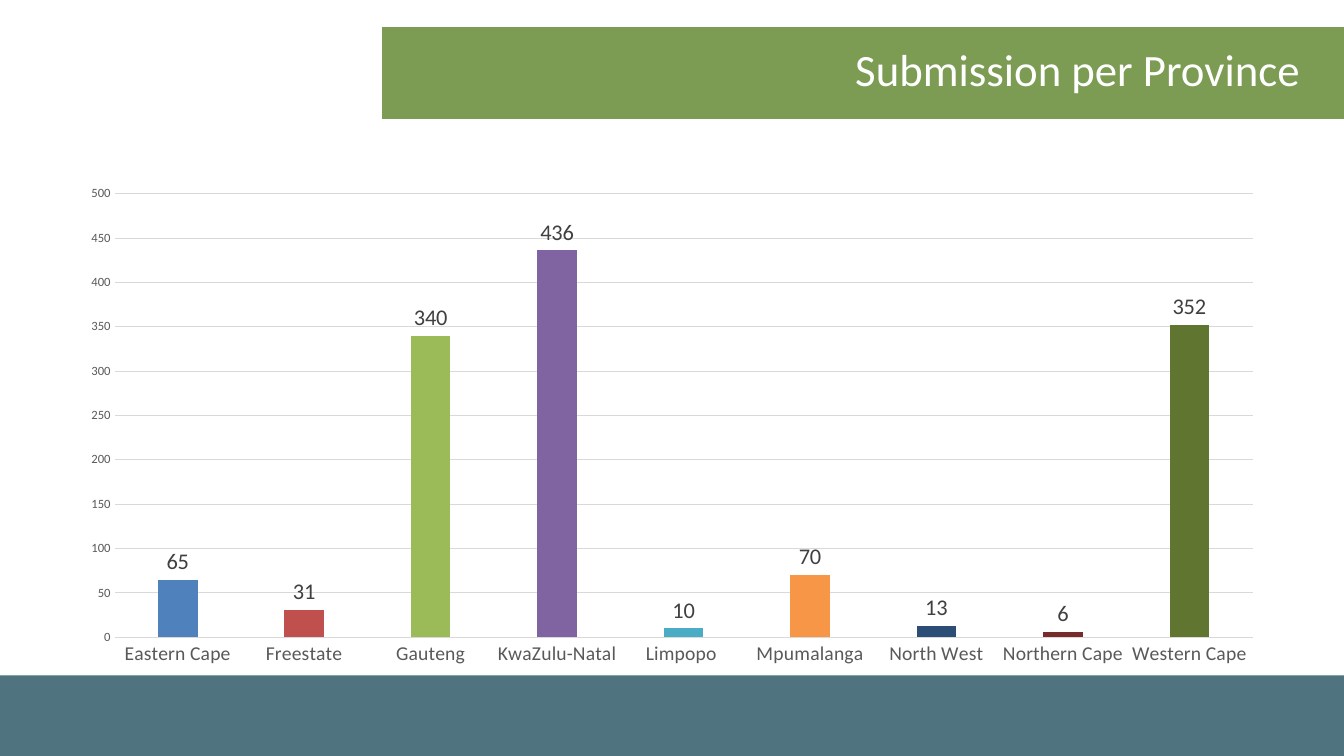
import pptx
import pptx.chart.data
import pptx.dml.color
import pptx.enum.chart
import pptx.enum.shapes
import pptx.enum.text
import pptx.oxml
import pptx.oxml.ns
import pptx.util

COLUMNS, ROWS = 160, 90
CELL = pptx.util.Inches(1) / 12
FONT = "Calibri"

SUBMISSIONS = [
    ("Eastern Cape", 65, "4F81BD"),
    ("Freestate", 31, "C0504D"),
    ("Gauteng", 340, "9BBB59"),
    ("KwaZulu-Natal", 436, "8064A2"),
    ("Limpopo ", 10, "4BACC6"),
    ("Mpumalanga", 70, "F79646"),
    ("North West", 13, "2C4D75"),
    ("Northern Cape", 6, "772C2A"),
    ("Western Cape", 352, "5F7530"),
]


def color(value):
    return pptx.dml.color.RGBColor.from_string(value)


def grid(*cells):
    return [round(cell * CELL) for cell in cells]


def style_font(font, size, fill):
    font.name = FONT
    font.size = pptx.util.Pt(size)
    font.bold = False
    font.color.rgb = color(fill)


def paint(part, fill):
    part.fill.solid()
    part.fill.fore_color.rgb = color(fill)


def style_line(line, fill):
    line.color.rgb = color(fill)
    line.width = pptx.util.Pt(0.75)


def add_band(page, place, fill):
    band = page.shapes.add_shape(
        pptx.enum.shapes.MSO_SHAPE.RECTANGLE, *grid(*place))
    band.shadow.inherit = False
    paint(band, fill)
    band.line.fill.background()
    return band


def add_shadow(shape, blur, distance, opacity):
    effects = shape._element.spPr.find(pptx.oxml.ns.qn("a:effectLst"))
    effects.append(pptx.oxml.parse_xml(
        f'<a:outerShdw {pptx.oxml.ns.nsdecls("a")} '
        f'blurRad="{pptx.util.Pt(blur)}" dist="{pptx.util.Pt(distance)}" '
        'dir="5400000" rotWithShape="0"><a:srgbClr val="000000">'
        f'<a:alpha val="{opacity * 1000}"/></a:srgbClr></a:outerShdw>'))


def add_text(page, place, text, size=18, fill="000000",
             align=pptx.enum.text.PP_ALIGN.LEFT):
    box = page.shapes.add_textbox(*grid(*place))
    frame = box.text_frame
    frame.word_wrap = True
    frame.vertical_anchor = pptx.enum.text.MSO_ANCHOR.MIDDLE
    para = frame.paragraphs[0]
    para.alignment = align
    span = para.add_run()
    span.text = text
    style_font(span.font, size, fill)


def style_axes(chart):
    no_tick = pptx.enum.chart.XL_TICK_MARK.NONE
    for axis, size in ((chart.category_axis, 14), (chart.value_axis, 9)):
        axis.major_tick_mark = no_tick
        axis.minor_tick_mark = no_tick
        style_font(axis.tick_labels.font, size, "595959")
    style_line(chart.category_axis.format.line, "D9D9D9")
    values = chart.value_axis
    values.format.line.fill.background()
    values.minimum_scale, values.maximum_scale, values.major_unit = 0, 500, 50
    values.has_major_gridlines = True
    style_line(values.major_gridlines.format.line, "D9D9D9")


def add_column_chart(page, place, records):
    names, counts, fills = zip(*records)
    data = pptx.chart.data.CategoryChartData()
    data.categories = names
    data.add_series("Series 1", counts)
    chart = page.shapes.add_chart(
        pptx.enum.chart.XL_CHART_TYPE.COLUMN_CLUSTERED,
        *grid(*place), data).chart
    chart.has_legend = False
    chart.has_title = False
    style_font(chart.font, 10, "000000")
    style_axes(chart)
    plot = chart.plots[0]
    plot.gap_width, plot.overlap = 219, -27
    plot.vary_by_categories = False
    series = plot.series[0]
    for index, fill in enumerate(fills):
        paint(series.points[index].format, fill)
    labels = series.data_labels
    labels.show_value = True
    labels.position = pptx.enum.chart.XL_LABEL_POSITION.OUTSIDE_END
    style_font(labels.font, 16, "404040")


def main():
    deck = pptx.Presentation()
    deck.slide_width, deck.slide_height = grid(COLUMNS, ROWS)
    page = deck.slides.add_slide(deck.slide_layouts[6])
    footer = add_band(page, (0, 80.4, COLUMNS, 9.6), "4F737F")
    add_shadow(footer, blur=3.1, distance=1.8, opacity=35)
    add_band(page, (45.48, 3.24, 114.72, 10.92), "7B9C52")
    add_text(page, (12, 0.72, 144, 15), "Submission per Province",
             size=32, fill="FFFFFF", align=pptx.enum.text.PP_ALIGN.RIGHT)
    add_column_chart(page, (8, 21, 144, 59.4), SUBMISSIONS)
    deck.save("out.pptx")


if __name__ == "__main__":
    main()
